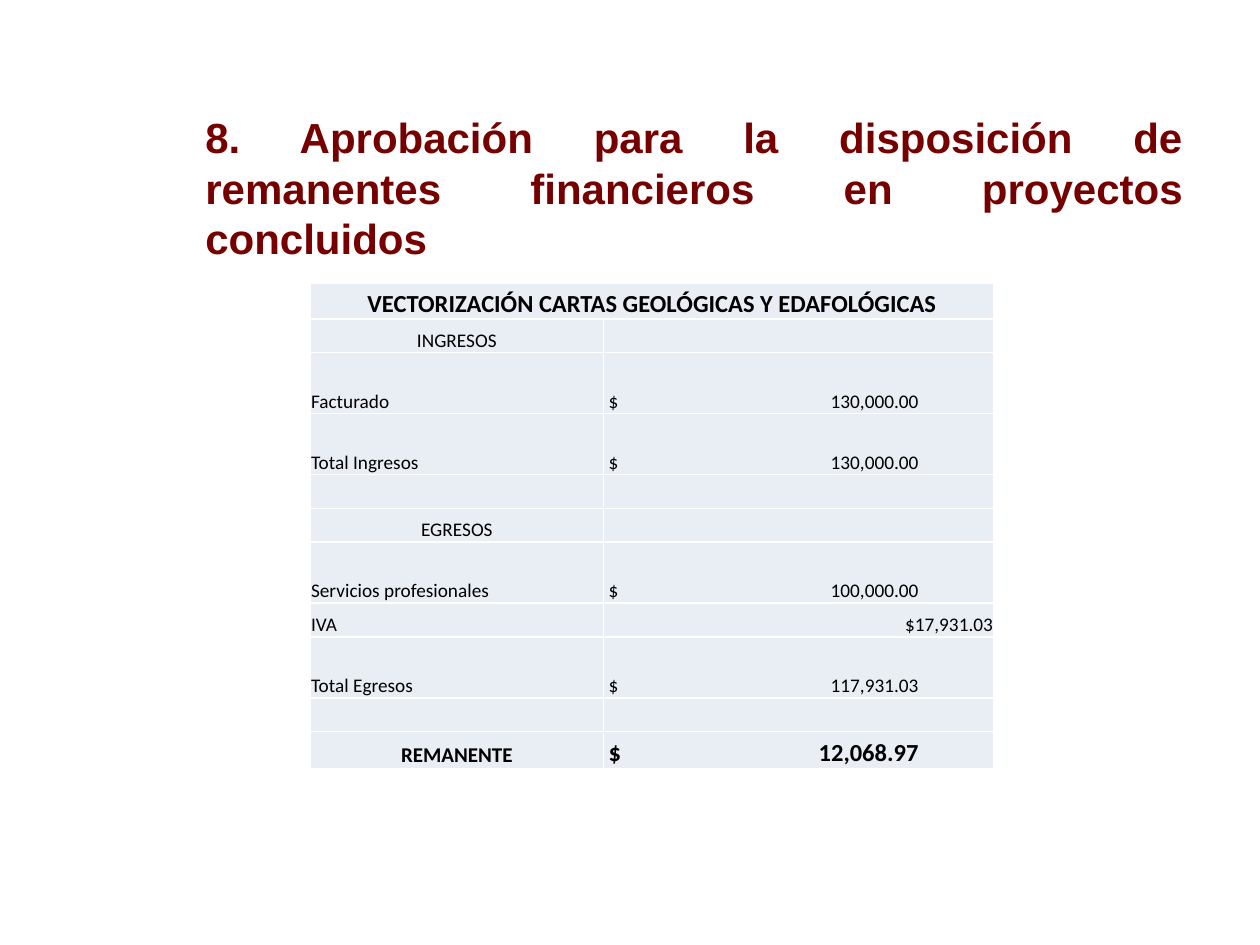
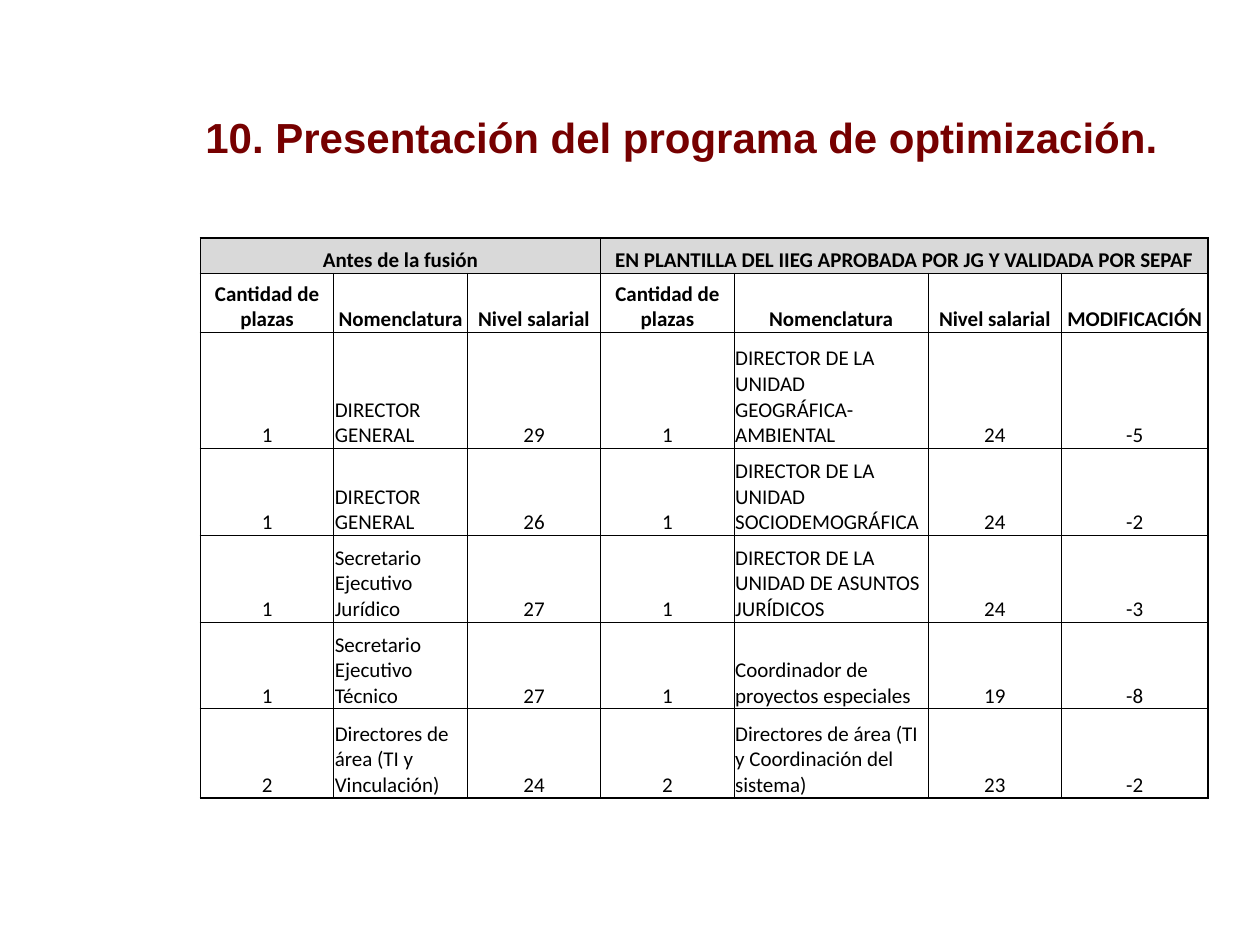
from pptx import Presentation
from pptx.dml.color import RGBColor
from pptx.enum.text import MSO_ANCHOR, MSO_AUTO_SIZE, PP_ALIGN
from pptx.oxml.xmlchemy import OxmlElement
from pptx.util import Cm, Pt

MAROON = RGBColor(0x76, 0x00, 0x00)
BLACK = RGBColor(0x00, 0x00, 0x00)
WHITE = RGBColor(0xFF, 0xFF, 0xFF)
PALE_BLUE = RGBColor(0xE9, 0xED, 0xF4)
GREY = RGBColor(0xD9, 0xD9, 0xD9)

LEFT, CENTER, RIGHT = PP_ALIGN.LEFT, PP_ALIGN.CENTER, PP_ALIGN.RIGHT
TITLE_FONT = dict(name="Arial", size=Pt(24), bold=True)
CELL_FONT = dict(name="Calibri", size=Pt(11), bold=False)
CELL_BOX = dict(margin_left=Cm(0.02), margin_right=Cm(0.02), margin_top=Cm(0.02),
                margin_bottom=0, vertical_anchor=MSO_ANCHOR.BOTTOM)
AMOUNT_INDENT, AMOUNT_TAB = Cm(0.1), Cm(6.25)

BALANCE_TITLE = "8. Aprobación para la disposición de remanentes financieros en proyectos concluidos"
BALANCE_HEADING = "VECTORIZACIÓN CARTAS GEOLÓGICAS Y EDAFOLÓGICAS"
BALANCE = [
    (BALANCE_HEADING, ""),
    ("INGRESOS", ""),
    ("Facturado", "$\t130,000.00"),
    ("Total Ingresos", "$\t130,000.00"),
    ("", ""),
    ("EGRESOS", ""),
    ("Servicios profesionales", "$\t100,000.00"),
    ("IVA", "$17,931.03"),
    ("Total Egresos", "$\t117,931.03"),
    ("", ""),
    ("REMANENTE", "$\t12,068.97"),
]
BALANCE_COLS = [5.92, 7.87]
BALANCE_CENTERED = {BALANCE_HEADING, "INGRESOS", "EGRESOS", "REMANENTE"}
ROW, AMOUNT_ROW, HEADING_ROW, TOTAL_ROW = 0.68, 1.23, 0.71, 0.74

STAFF_TITLE = "10. Presentación del programa de optimización."
STAFF_GROUPS = [(0, 3, "Antes de la fusión"),
                (3, 4, "EN PLANTILLA DEL IIEG APROBADA POR JG Y VALIDADA POR SEPAF")]
POST = ("Cantidad de plazas", "Nomenclatura", "Nivel salarial")
STAFF = [
    (*POST, *POST, "MODIFICACIÓN"),
    ("1", "DIRECTOR GENERAL", "29", "1", "DIRECTOR DE LA UNIDAD GEOGRÁFICA-AMBIENTAL", "24", "-5"),
    ("1", "DIRECTOR GENERAL", "26", "1", "DIRECTOR DE LA UNIDAD SOCIODEMOGRÁFICA", "24", "-2"),
    ("1", "Secretario Ejecutivo Jurídico", "27", "1", "DIRECTOR DE LA UNIDAD DE ASUNTOS JURÍDICOS", "24", "-3"),
    ("1", "Secretario Ejecutivo Técnico", "27", "1", "Coordinador de proyectos especiales", "19", "-8"),
    ("2", "Directores de área (TI y Vinculación)", "24", "2",
     "Directores de área (TI y Coordinación del sistema)", "23", "-2"),
]
STAFF_COLS = [2.69, 2.69, 2.69, 2.69, 3.91, 2.69, 2.95]
STAFF_ROWS = [0.71, 1.19, 2.34, 1.75, 1.75, 1.75, 1.8]
NAME_COLS = (1, 4)


def assign(obj, values):
    for name, value in values.items():
        setattr(obj, name, value)


def add_slide(prs, title, align):
    s = prs.slides.add_slide(prs.slide_layouts[5])
    box = s.shapes.title
    assign(box, dict(left=Cm(3.58), top=Cm(2.13), width=Cm(20.52), height=Cm(14.6)))
    tf = box.text_frame
    assign(tf, dict(text=title, word_wrap=True, auto_size=MSO_AUTO_SIZE.NONE,
                    vertical_anchor=MSO_ANCHOR.TOP, margin_left=Cm(0.56)))
    p = tf.paragraphs[0]
    p.alignment = align
    r = p.runs[0]
    assign(r.font, TITLE_FONT)
    r.font.color.rgb = MAROON
    return s


def add_table(s, left, top, cols, rows):
    frame = s.shapes.add_table(len(rows), len(cols), Cm(left), Cm(top), Cm(sum(cols)), Cm(sum(rows)))
    table = frame.table
    assign(table, dict(first_row=False, horz_banding=False))
    for col, width in zip(table.columns, cols):
        col.width = Cm(width)
    for row, height in zip(table.rows, rows):
        row.height = Cm(height)
    return table


def set_borders(cell, color, widths):
    tc_pr = cell._tc.get_or_add_tcPr()
    for i, (side, width) in enumerate(zip("LRTB", widths)):
        ln = OxmlElement(f"a:ln{side}")
        ln.set("w", str(Pt(width)))
        fill, clr = OxmlElement("a:solidFill"), OxmlElement("a:srgbClr")
        clr.set("val", str(color))
        fill.append(clr)
        ln.append(fill)
        tc_pr.insert(i, ln)


def add_amount_tab(p):
    tabs, tab = OxmlElement("a:tabLst"), OxmlElement("a:tab")
    tab.set("pos", str(AMOUNT_TAB))
    tab.set("algn", "r")
    tabs.append(tab)
    p._p.get_or_add_pPr().append(tabs)


def fill_cell(cell, text, align, fill=None, **font):
    assign(cell, CELL_BOX)
    if fill is None:
        cell.fill.background()
    else:
        cell.fill.solid()
        cell.fill.fore_color.rgb = fill
    p = cell.text_frame.paragraphs[0]
    p.alignment = align
    if not text:
        end = OxmlElement("a:endParaRPr")
        end.set("sz", "1100")
        p._p.append(end)
        return
    if "\t" in text:
        cell.margin_left = AMOUNT_INDENT
        add_amount_tab(p)
    r = p.add_run()
    r.text = text
    assign(r.font, {**CELL_FONT, **font})
    r.font.color.rgb = BLACK


def balance_slide(prs):
    s = add_slide(prs, BALANCE_TITLE, PP_ALIGN.JUSTIFY)
    rows = [AMOUNT_ROW if "\t" in amount else ROW for _, amount in BALANCE]
    rows[0], rows[-1] = HEADING_ROW, TOTAL_ROW
    table = add_table(s, 6.25, 5.72, BALANCE_COLS, rows)
    table.cell(0, 0).merge(table.cell(0, 1))
    last = len(BALANCE) - 1
    for i, (label, amount) in enumerate(BALANCE):
        bold = i in (0, last)
        label_size = {0: Pt(14), last: Pt(12)}.get(i, Pt(11))
        amount_size = Pt(14) if i == last else Pt(11)
        label_align = CENTER if label in BALANCE_CENTERED else LEFT
        amount_align = LEFT if "\t" in amount else RIGHT
        fill_cell(table.cell(i, 0), label, label_align, PALE_BLUE, size=label_size, bold=bold)
        fill_cell(table.cell(i, 1), amount, amount_align, PALE_BLUE, size=amount_size, bold=bold)
        for j in range(2):
            set_borders(table.cell(i, j), WHITE, [1] * 4)


def staff_slide(prs):
    s = add_slide(prs, STAFF_TITLE, LEFT)
    table = add_table(s, 4.04, 4.8, STAFF_COLS, STAFF_ROWS)
    for first, span, text in STAFF_GROUPS:
        table.cell(0, first).merge(table.cell(0, first + span - 1))
        fill_cell(table.cell(0, first), text, CENTER, GREY, size=Pt(12), bold=True)
    for i, row in enumerate(STAFF, 1):
        for j, text in enumerate(row):
            align = LEFT if i > 1 and j in NAME_COLS else CENTER
            fill_cell(table.cell(i, j), text, align, size=Pt(12), bold=i == 1)
    group_edges = {0, 3, len(STAFF_COLS)}
    row_edges = {0, len(STAFF_ROWS)}
    for i in range(len(STAFF_ROWS)):
        for j in range(len(STAFF_COLS)):
            cell = table.cell(i, j)
            right = j + (cell.span_width if cell.is_merge_origin else 1)
            heavy = (j in group_edges, right in group_edges, i in row_edges, i + 1 in row_edges)
            set_borders(cell, BLACK, [1 if edge else 0.5 for edge in heavy])


def main():
    """Build the two board-meeting slides."""
    prs = Presentation()
    prs.slide_width, prs.slide_height = Cm(25.4), Cm(19.05)
    balance_slide(prs)
    staff_slide(prs)
    prs.save("out.pptx")


if __name__ == "__main__":
    main()
